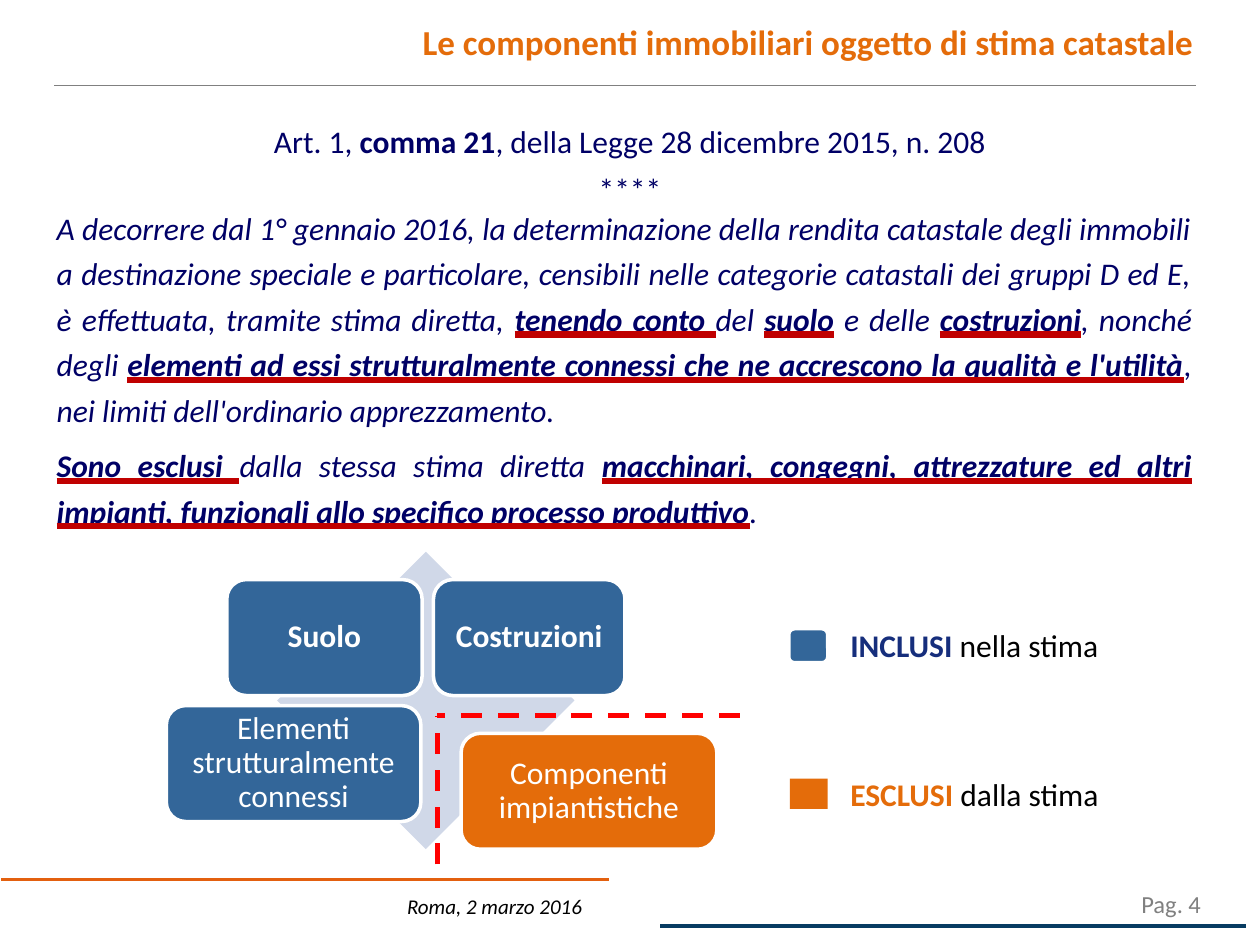
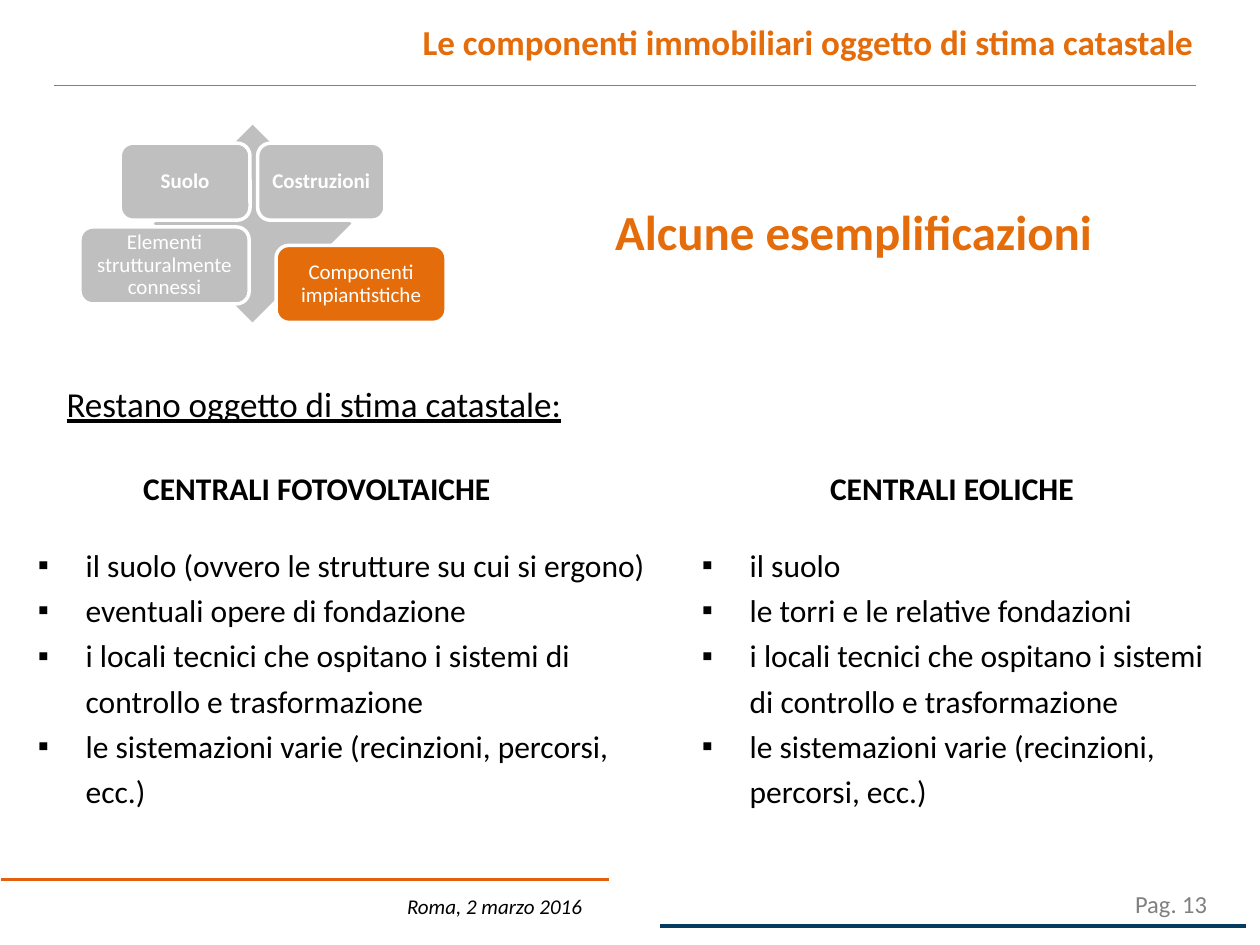
"""Build two slides on the property parts that count in a cadastral estimate."""
from lxml.etree import SubElement
from pptx import Presentation
from pptx.dml.color import RGBColor
from pptx.enum.dml import MSO_LINE
from pptx.enum.shapes import MSO_CONNECTOR, MSO_SHAPE
from pptx.enum.text import MSO_ANCHOR, MSO_AUTO_SIZE, MSO_UNDERLINE, PP_ALIGN
from pptx.oxml.ns import qn
from pptx.util import Inches, Pt

HUES = {
    "orange": "E46C0A", "navy": "000066", "blue": "336699", "royal": "162E7C",
    "pale": "D0D8E8", "mute": "BFBFBF", "gray": "808080", "rust": "E3600F",
    "deep": "073C62", "red": "FF0000", "under": "C00000", "white": "FFFFFF",
    "black": "000000",
}
TINT = {name: RGBColor.from_string(code) for name, code in HUES.items()}
LEFT, MID, RIGHT, FULL = PP_ALIGN.LEFT, PP_ALIGN.CENTER, PP_ALIGN.RIGHT, PP_ALIGN.JUSTIFY

deck = Presentation()
deck.slide_width, deck.slide_height = Inches(10), Inches(7.5)
COL, ROW = deck.slide_width // 100, deck.slide_height // 75


def spot(x, y, w, h):
    """Turn columns and rows of the grid into slide lengths."""
    return [int(x * COL), int(y * ROW), int(w * COL), int(h * ROW)]


def write(shape, rows, size, hue="black", para={}, font={}, strong={"bold": True},
          mark=None, line=None, pop=None, pad=None, top=MSO_ANCHOR.TOP):
    """Fill a shape with paragraphs whose parts between bars are strong."""
    frame = shape.text_frame
    look = {"word_wrap": True, "auto_size": MSO_AUTO_SIZE.NONE, "vertical_anchor": top}
    if pad is not None:
        look |= {f"margin_{side}": pad for side in ("left", "top", "right", "bottom")}
    for key, val in look.items():
        setattr(frame, key, val)
    for at, row in enumerate(rows):
        item = frame.paragraphs[0] if at == 0 else frame.add_paragraph()
        for key, val in ({"space_before": Pt(0), "alignment": LEFT} | para).items():
            setattr(item, key, val)
        if mark is not None:
            props = item._p.get_or_add_pPr()
            dent = int(3.8 * COL) if mark else 0
            props.set("marL", str(dent))
            props.set("indent", str(-dent))
            if mark:
                SubElement(props, qn("a:buChar")).set("char", mark)
            else:
                SubElement(props, qn("a:buNone"))
        for turn, text in enumerate(row.split("|")):
            if not text:
                continue
            run = item.add_run()
            run.text = text
            bold = turn % 2
            run.font.color.rgb = TINT[pop if bold and pop else hue]
            if bold and line:
                fill = SubElement(run.font._element, qn("a:uFill"))
                paint = SubElement(fill, qn("a:solidFill"))
                SubElement(paint, qn("a:srgbClr")).set("val", HUES[line])
            style = {"size": Pt(size), "name": "Calibri"} | font | (strong if bold else {})
            for key, val in style.items():
                setattr(run.font, key, val)


HEAD = "Le componenti immobiliari oggetto di stima catastale"
LAW = [
    "A decorrere dal 1° gennaio 2016, la determinazione della rendita catastale degli "
    "immobili a destinazione speciale e particolare, censibili nelle categorie catastali "
    "dei gruppi D ed E, è effettuata, tramite stima diretta, |tenendo conto |del |suolo| e "
    "delle |costruzioni|, nonché degli |elementi ad essi strutturalmente connessi che ne "
    "accrescono la qualità e l'utilità|, nei limiti dell'ordinario apprezzamento.",
    "|Sono esclusi |dalla stessa stima diretta |macchinari, congegni, attrezzature ed altri "
    "impianti, funzionali allo specifico processo produttivo|.",
]
ROOMS = "i locali tecnici che ospitano i sistemi di controllo e trasformazione"
YARD = "le sistemazioni varie (recinzioni, percorsi, ecc.)"
SUN = ["il suolo (ovvero le strutture su cui si ergono)", "eventuali opere di fondazione", ROOMS, YARD]
WIND = ["il suolo", "le torri e le relative fondazioni", ROOMS, YARD]

LIST = {"size": 18, "mark": "▪", "para": {"line_spacing": 1.2}}
PROSE = {
    "size": 18, "hue": "navy", "mark": "", "line": "under", "font": {"italic": True},
    "para": {"alignment": FULL, "line_spacing": 1.2, "space_after": Pt(6)},
    "strong": {"bold": True, "underline": MSO_UNDERLINE.HEAVY_LINE},
}
KIND = {"size": 18, "para": {"alignment": MID}}
CARDS = [
    ("|Suolo|", -4, 2.2, 15.5),
    ("|Costruzioni|", 12.4, 2.2, 15.2),
    ("Elementi strutturalmente connessi", -8.8, 12.2, 20.2),
    ("Componenti impiantistiche", 14.6, 14.4, 20.3),
]
RULES = [
    (4.3, 6.8, 94.9, 6.8, "gray", 0.75),
    (0.1, 69.8, 48.3, 69.8, "rust", 2.25),
    (52.4, 73.5, 98.9, 73.5, "deep", 2.25),
]
PAGES = [
    {
        "num": 4, "plan": 1, "left": 22, "top": 43.8, "zoom": 1, "size": 18,
        "base": "pale", "card": "blue",
        "body": [((3.5, 15.5, 92.1, 27.3), LAW, PROSE)],
        "note": [
            ((7.1, 9.2, 85.8, 7.9), ["Art. 1, |comma 21|, della Legge 28 dicembre 2015, n. 208", "****"],
             {"size": 18, "hue": "navy", "para": {"alignment": MID, "space_after": Pt(6)}}),
            ((66.5, 49.2, 22.5, 4), ["|INCLUSI| nella stima"], {"size": 18, "pop": "royal"}),
            ((66.5, 61, 22.5, 4), ["|ESCLUSI| dalla stima"], {"size": 18, "pop": "orange"}),
        ],
        "chip": [
            (MSO_SHAPE.ROUNDED_RECTANGLE, (62.6, 49.9, 3.1, 2.7), "blue"),
            (MSO_SHAPE.RECTANGLE, (62.7, 61.8, 3, 2.4), "orange"),
        ],
        "dash": [(34.7, 68.6, 34.7, 56.8, "red", 3), (58.7, 56.8, 34.7, 56.8, "red", 3)],
    },
    {
        "num": 13, "plan": 3, "left": 12.2, "top": 9.9, "zoom": 0.665, "size": 12,
        "base": "mute", "card": "mute",
        "body": [((2, 42.2, 51.2, 22.8), SUN, LIST), ((54.7, 42.2, 44.1, 22.8), WIND, LIST)],
        "note": [
            ((47.1, 15.5, 41.3, 5.7), ["|Alcune esemplificazioni|"],
             {"size": 28, "hue": "orange", "para": {"alignment": MID}}),
            ((4.3, 29.2, 52.8, 5), ["Restano oggetto di stima catastale:"],
             {"size": 20, "font": {"underline": True}, "para": {"line_spacing": 1.2}}),
            ((9.8, 36.7, 30.7, 4), ["|CENTRALI FOTOVOLTAICHE|"], KIND),
            ((60.2, 36.7, 30.7, 4), ["|CENTRALI EOLICHE|"], KIND),
        ],
        "chip": [], "dash": [],
    },
]

for page in PAGES:
    slide = deck.slides.add_slide(deck.slide_layouts[page["plan"]])
    shapes = slide.shapes
    title, *holds = slide.placeholders
    title.left, title.top, title.width, title.height = spot(19.3, 1.3, 76.4, 4.7)
    write(title, [HEAD], 20, "orange", {"alignment": RIGHT, "line_spacing": Pt(19)},
          {"bold": True}, top=MSO_ANCHOR.MIDDLE)

    for hold, (area, rows, form) in zip(holds, page["body"]):
        hold.left, hold.top, hold.width, hold.height = spot(*area)
        write(hold, rows, **form)

    foot = [
        ((87.9, 70.1, 10.1, 3.4), [f"Pag. {page['num']}"],
         {"size": 14, "hue": "gray", "para": {"alignment": MID}}),
        ((30.6, 70.4, 16.6, 3), ["Roma, 2 marzo 2016"],
         {"size": 12, "font": {"italic": True}, "para": {"alignment": RIGHT}}),
    ]
    for area, rows, form in page["note"] + foot:
        write(shapes.add_textbox(*spot(*area)), rows, **form)

    zoom = page["zoom"]
    parts = [(MSO_SHAPE.DIAMOND, (page["left"], page["top"], 23.6 * zoom, 23.6 * zoom), page["base"], "")]
    for text, x, y, wide in CARDS:
        area = (page["left"] + x * zoom, page["top"] + y * zoom, wide * zoom, 9.2 * zoom)
        hue = "orange" if text.startswith("Comp") else page["card"]
        parts.append((MSO_SHAPE.ROUNDED_RECTANGLE, area, hue, text))
    parts += [(*chip, "") for chip in page["chip"]]
    for kind, area, hue, text in parts:
        part = shapes.add_shape(kind, *spot(*area))
        part.shadow.inherit = False
        part.fill.solid()
        part.fill.fore_color.rgb = TINT[hue]
        if kind == MSO_SHAPE.ROUNDED_RECTANGLE:
            part.line.color.rgb = TINT["white"]
            part.line.width = Pt(2)
        else:
            part.line.fill.background()
        if text:
            write(part, [text], page["size"], "white", {"alignment": MID, "line_spacing": 0.9},
                  pad=int(0.7 * zoom * COL), top=MSO_ANCHOR.MIDDLE)

    for x, y, far, low, hue, thick in RULES + page["dash"]:
        rule = shapes.add_connector(MSO_CONNECTOR.STRAIGHT, *spot(x, y, far, low))
        SubElement(rule._element.spPr, qn("a:effectLst"))
        rule.line.color.rgb = TINT[hue]
        rule.line.width = Pt(thick)
        if hue == "red":
            rule.line.dash_style = MSO_LINE.DASH

deck.save("out.pptx")
